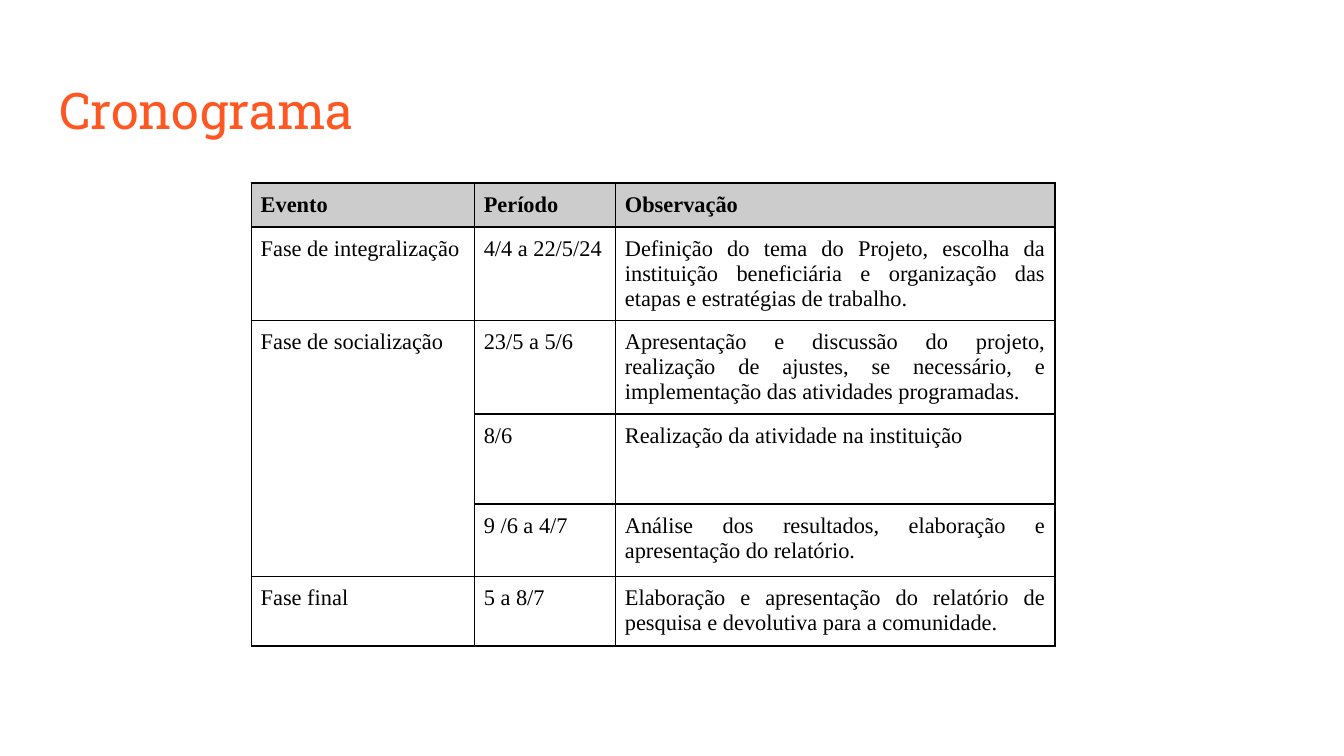
from dataclasses import dataclass

from lxml import etree
from pptx import Presentation
from pptx import util as u
from pptx.dml.color import RGBColor
from pptx.enum import text
from pptx.oxml.ns import qn
from pptx.table import _Cell
from pptx.text.text import TextFrame

COLORS = {"title": "FF5722", "ink": "000000", "header": "CCCCCC"}
COLUMN_WIDTHS = (1.66, 1.05, 3.27)
SLIDE_WIDTH = 10


@dataclass(frozen=True)
class Stage:
    event: str
    period: str
    note: str
    height: float
    event_rows: int = 1


HEADER = Stage("Evento", "Período", "Observação", 0.33)
STAGES = [
    HEADER,
    Stage("Fase de integralização", "4/4 a 22/5/24",
          "Definição do tema do Projeto, escolha da instituição beneficiária "
          "e organização das etapas e estratégias de trabalho.", 0.69),
    Stage("Fase de socialização", "23/5 a 5/6",
          "Apresentação e discussão do projeto, realização de ajustes, se "
          "necessário, e implementação das atividades programadas.", 0.69, 3),
    Stage("", "8/6", "Realização da atividade na instituição", 0.67),
    Stage("", "9 /6 a 4/7",
          "Análise dos resultados, elaboração e apresentação do relatório.", 0.54),
    Stage("Fase final", "5 a 8/7",
          "Elaboração e apresentação do relatório de pesquisa e devolutiva "
          "para a comunidade.", 0.52),
]


def write(frame: TextFrame, words: str, *, font: str, size: float, color: str,
          align: text.PP_ALIGN, bold: bool = False) -> None:
    paragraph = frame.paragraphs[0]
    paragraph.alignment = align
    run = paragraph.add_run()
    run.text = words
    run.font.name = font
    run.font.size = u.Pt(size)
    run.font.bold = bold
    run.font.color.rgb = RGBColor.from_string(COLORS[color])


def set_margins(holder: _Cell | TextFrame, margin: float) -> None:
    holder.margin_left = holder.margin_right = u.Inches(margin)
    holder.margin_top = holder.margin_bottom = u.Inches(margin)


def style_cell(cell: _Cell, is_header: bool) -> None:
    set_margins(cell, 0.07)
    if is_header:
        cell.fill.solid()
        cell.fill.fore_color.rgb = RGBColor.from_string(COLORS["header"])
    else:
        cell.fill.background()
    properties = cell._tc.get_or_add_tcPr()
    for position, side in enumerate(("lnL", "lnR", "lnT", "lnB")):
        border = etree.Element(qn(f"a:{side}"), w=str(u.Pt(1)))
        fill = etree.SubElement(border, qn("a:solidFill"))
        etree.SubElement(fill, qn("a:srgbClr"), val=COLORS["ink"])
        properties.insert(position, border)


def draw_schedule(slide, stages: list[Stage]) -> None:
    schedule = slide.shapes.add_table(
        len(stages), len(COLUMN_WIDTHS), u.Inches(1.87), u.Inches(1.36),
        u.Inches(sum(COLUMN_WIDTHS)), u.Inches(sum(s.height for s in stages))).table
    schedule.horz_banding = False
    for column, width in zip(schedule.columns, COLUMN_WIDTHS):
        column.width = u.Inches(width)
    for row, stage in enumerate(stages):
        schedule.rows[row].height = u.Inches(stage.height)
        is_header = stage is HEADER
        for col, words in enumerate((stage.event, stage.period, stage.note)):
            cell = schedule.cell(row, col)
            style_cell(cell, is_header)
            if words:
                write(cell.text_frame, words, font="Times New Roman", size=12,
                      color="ink", align=text.PP_ALIGN.JUSTIFY, bold=is_header)
        if stage.event_rows > 1:
            last = schedule.cell(row + stage.event_rows - 1, 0)
            schedule.cell(row, 0).merge(last)


def main() -> None:
    deck = Presentation()
    deck.slide_width = u.Inches(SLIDE_WIDTH)
    deck.slide_height = u.Inches(SLIDE_WIDTH * 9 / 16)
    slide = deck.slides.add_slide(deck.slide_layouts[5])
    title = slide.shapes.title
    title.left, title.top = u.Inches(0.34), u.Inches(0.49)
    title.width, title.height = u.Inches(9.32), u.Inches(0.63)
    heading = title.text_frame
    heading.word_wrap = True
    heading.auto_size = text.MSO_AUTO_SIZE.NONE
    heading.vertical_anchor = text.MSO_ANCHOR.TOP
    set_margins(heading, 0.1)
    write(heading, "Cronograma", font="Roboto Slab", size=27, color="title",
          align=text.PP_ALIGN.LEFT)
    draw_schedule(slide, STAGES)
    deck.save("out.pptx")


if __name__ == "__main__":
    main()
